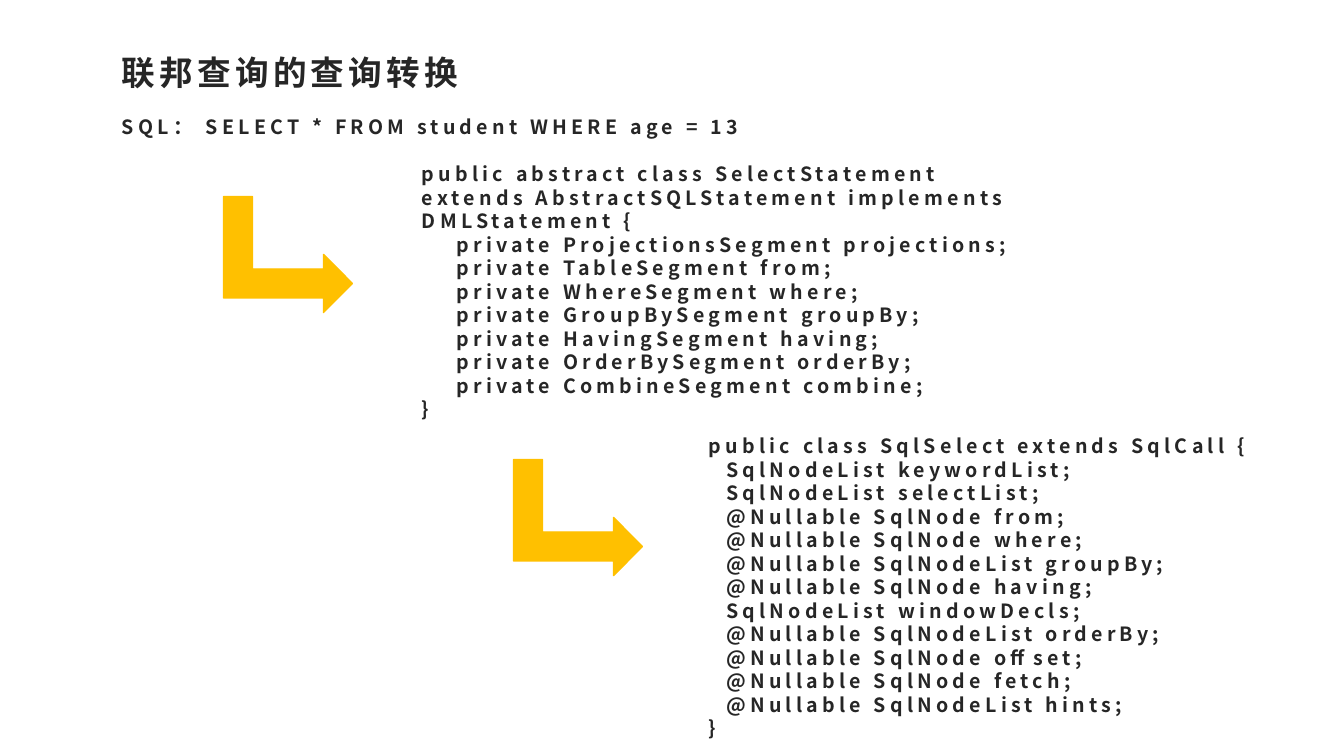
import pptx
import pptx.dml.color
import pptx.enum.shapes
import pptx.enum.text
import pptx.oxml.ns
import pptx.util
from lxml import etree

EMU_PER_PX = 914400 / 100.8
FONT = "Noto Sans CJK SC"
COLOURS = {"text": "262626", "arrow": "FFC000"}

SQL = ["SQL： SELECT * FROM student WHERE age = 13"]
SELECT_STATEMENT = [
    "public abstract class SelectStatement extends AbstractSQLStatement implements DMLStatement {",
    "    private ProjectionsSegment projections;",
    "    private TableSegment from;",
    "    private WhereSegment where;",
    "    private GroupBySegment groupBy;",
    "    private HavingSegment having;",
    "    private OrderBySegment orderBy;",
    "    private CombineSegment combine;",
    "}",
]
SQL_SELECT = [
    "public class SqlSelect extends SqlCall {",
    "  SqlNodeList keywordList;",
    "  SqlNodeList selectList;",
    "  @Nullable SqlNode from;",
    "  @Nullable SqlNode where;",
    "  @Nullable SqlNodeList groupBy;",
    "  @Nullable SqlNode having;",
    "  SqlNodeList windowDecls;",
    "  @Nullable SqlNodeList orderBy;",
    "  @Nullable SqlNode offset;",
    "  @Nullable SqlNode fetch;",
    "  @Nullable SqlNodeList hints;",
    "}",
]


def px(*lengths):
    return [pptx.util.Emu(round(length * EMU_PER_PX)) for length in lengths]


def write_lines(box, lines, size):
    """Fill a box with bold, letter-spaced lines, one paragraph each."""
    frame = box.text_frame
    frame.word_wrap = True
    frame.auto_size = pptx.enum.text.MSO_AUTO_SIZE.NONE
    frame.vertical_anchor = pptx.enum.text.MSO_ANCHOR.TOP
    frame.margin_left, frame.margin_right, frame.margin_top, frame.margin_bottom = px(10, 10, 5, 5)
    for index, line in enumerate(lines):
        para = frame.add_paragraph() if index else frame.paragraphs[0]
        para.alignment = pptx.enum.text.PP_ALIGN.LEFT
        para.space_before = pptx.util.Pt(0)
        para.line_spacing = pptx.util.Pt(size * 1.2)
        span = para.add_run()
        span.text = line
        span.font.size = pptx.util.Pt(size)
        span.font.bold = True
        span.font.color.rgb = pptx.dml.color.RGBColor.from_string(COLOURS["text"])
        span.font.name = FONT
        properties = span.font._element
        properties.set("spc", "300")
        east_asian = etree.SubElement(properties, pptx.oxml.ns.qn("a:ea"))
        east_asian.set("typeface", FONT)


deck = pptx.Presentation()
deck.slide_width, deck.slide_height = px(1344, 756)
page = deck.slides.add_slide(deck.slide_layouts[5])

title = page.shapes.title
title.left, title.top, title.width, title.height = px(112, 47, 932, 50)
write_lines(title, ["联邦查询的查询转换"], 24)

for place, lines in [
    ((112, 110, 1097, 34), SQL),
    ((412, 157, 644, 271), SELECT_STATEMENT),
    ((699, 429, 644, 318), SQL_SELECT),
]:
    write_lines(page.shapes.add_textbox(*px(*place)), lines, 14)

for left, top in [(230, 190), (520, 453)]:
    arrow = page.shapes.add_shape(
        pptx.enum.shapes.MSO_SHAPE.BENT_UP_ARROW, *px(left, top, 116, 129))
    arrow.rotation = 90
    arrow.shadow.inherit = False
    arrow_colour = pptx.dml.color.RGBColor.from_string(COLOURS["arrow"])
    arrow.fill.solid()
    arrow.fill.fore_color.rgb = arrow_colour
    arrow.line.color.rgb = arrow_colour
    arrow.line.width = pptx.util.Pt(1)

deck.save("out.pptx")
